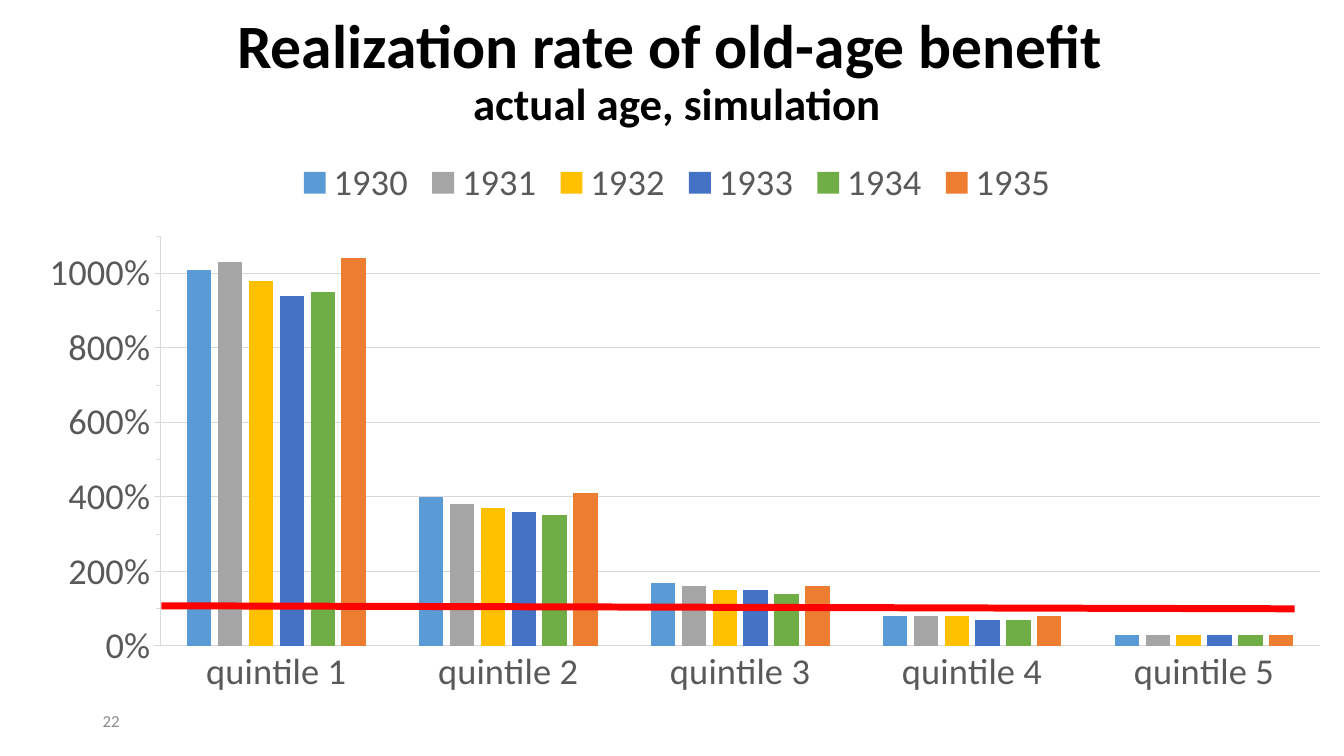
from lxml import etree
from pptx import Presentation
from pptx.chart.data import CategoryChartData as ChartData
from pptx.dml.color import RGBColor
from pptx.enum.chart import (XL_CHART_TYPE as ChartType, XL_LEGEND_POSITION as LegendPos,
                             XL_TICK_MARK as Tick)
from pptx.enum.shapes import MSO_CONNECTOR as Connector
from pptx.enum.text import MSO_ANCHOR as Anchor, MSO_AUTO_SIZE as AutoSize, PP_ALIGN as Align
from pptx.oxml.ns import qn
from pptx.util import Inches, Pt

COLORS = {
    "title": "000000", "label": "595959", "grid": "D9D9D9",
    "number": "8C8C8C", "full rate": "FF0000",
    "1930": "5B9BD5", "1931": "A5A5A5", "1932": "FFC000",
    "1933": "4472C4", "1934": "70AD47", "1935": "ED7D31",
}
QUINTILES = [f"quintile {n}" for n in range(1, 6)]
RATES = {
    "1930": (10.1, 4.0, 1.7, 0.8, 0.3),
    "1931": (10.3, 3.8, 1.6, 0.8, 0.3),
    "1932": (9.8, 3.7, 1.5, 0.8, 0.3),
    "1933": (9.4, 3.6, 1.5, 0.7, 0.3),
    "1934": (9.5, 3.5, 1.4, 0.7, 0.3),
    "1935": (10.4, 4.1, 1.6, 0.8, 0.3),
}
PLOT_AREA = {"x": 0.108, "y": 0.156, "w": 0.88, "h": 0.711}


class SlideBuilder:
    """Holds the style and the current slide."""

    font_name = "Calibri"
    chart_size = 26

    def __init__(self, slide):
        self.slide = slide

    def color(self, name):
        return RGBColor.from_string(COLORS[name])

    def style_font(self, font, size, color, bold=False):
        font.name = self.font_name
        font.size = Pt(size)
        font.bold = bold
        font.color.rgb = self.color(color)

    def style_line(self, line, color, width):
        line.color.rgb = self.color(color)
        line.width = Pt(width)

    def title(self, box, heading, subheading):
        title = self.slide.shapes.title
        title.left, title.top, title.width, title.height = map(Inches, box)
        frame = title.text_frame
        frame.auto_size = AutoSize.NONE
        frame.vertical_anchor = Anchor.MIDDLE
        line = frame.paragraphs[0]
        line.alignment = Align.CENTER
        line.line_spacing = 0.9
        self.style_font(line.font, 44, "title", bold=True)
        line.add_run().text = heading
        line.add_line_break()
        second = line.add_run()
        second.text = subheading
        second.font.size = Pt(32)

    def column_chart(self, box, categories, series):
        data = ChartData(number_format="0%")
        data.categories = categories
        for name, values in series.items():
            data.add_series(name, values)
        chart = self.slide.shapes.add_chart(
            ChartType.COLUMN_CLUSTERED, *map(Inches, box), data).chart
        chart.has_title = False
        self.style_font(chart.font, self.chart_size, "label")

        # Columns
        plot = chart.plots[0]
        plot.vary_by_categories = False
        plot.gap_width = 219
        plot.overlap = -27
        for column in plot.series:
            column.format.fill.solid()
            column.format.fill.fore_color.rgb = self.color(column.name)

        # Legend
        chart.has_legend = True
        chart.legend.position = LegendPos.TOP
        chart.legend.include_in_layout = False
        self.style_font(chart.legend.font, self.chart_size, "label")

        # Axes
        for axis in (chart.category_axis, chart.value_axis):
            self.style_font(axis.tick_labels.font, self.chart_size, "label")
            self.style_line(axis.format.line, "grid", 0.75)
        chart.category_axis.major_tick_mark = Tick.NONE
        rate_axis = chart.value_axis
        rate_axis.minimum_scale, rate_axis.maximum_scale = 0, 11
        rate_axis.major_unit, rate_axis.minor_unit = 2, 1
        rate_axis.major_tick_mark = rate_axis.minor_tick_mark = Tick.OUTSIDE
        rate_axis.tick_labels.number_format = "0%"
        rate_axis.tick_labels.number_format_is_linked = False
        rate_axis.has_major_gridlines = True
        self.style_line(rate_axis.major_gridlines.format.line, "grid", 0.75)
        self.place_plot(chart)

    def place_plot(self, chart):
        area = chart.plots[0]._element.getparent()
        for old in area.findall(qn("c:layout")):
            area.remove(old)
        layout = etree.Element(qn("c:layout"))
        area.insert(0, layout)
        manual = etree.SubElement(layout, qn("c:manualLayout"))
        settings = {"layoutTarget": "inner", "xMode": "edge", "yMode": "edge", **PLOT_AREA}
        for tag, value in settings.items():
            etree.SubElement(manual, qn(f"c:{tag}")).set("val", str(value))

    def line(self, start, end, color, width):
        connector = self.slide.shapes.add_connector(
            Connector.STRAIGHT, *map(Inches, start + end))
        self.style_line(connector.line, color, width)
        etree.SubElement(connector._element.spPr, qn("a:effectLst"))

    def text(self, box, words, size, color):
        frame = self.slide.shapes.add_textbox(*map(Inches, box)).text_frame
        frame.word_wrap = True
        frame.vertical_anchor = Anchor.MIDDLE
        paragraph = frame.paragraphs[0]
        paragraph.text = words
        paragraph.alignment = Align.LEFT
        self.style_font(paragraph.font, size, color)


def main():
    deck = Presentation()
    deck.slide_width, deck.slide_height = Inches(13.33), Inches(7.5)
    title_only = deck.slide_layouts[5]
    page = SlideBuilder(deck.slides.add_slide(title_only))

    # Heading
    page.title((0.18, 0, 13.07, 1.45),
               "Realization rate of old-age benefit ", "actual age, simulation")
    # Rates by quintile and birth year
    page.column_chart((0.18, 1.45, 13.07, 5.72), QUINTILES, RATES)
    # Mark at a rate of 100%
    page.line((1.6, 6.01), (12.84, 6.04), "full rate", 5)
    # Slide number
    page.text((0.92, 6.95, 3, 0.4), "22", 12, "number")

    deck.save("out.pptx")


if __name__ == "__main__":
    main()
